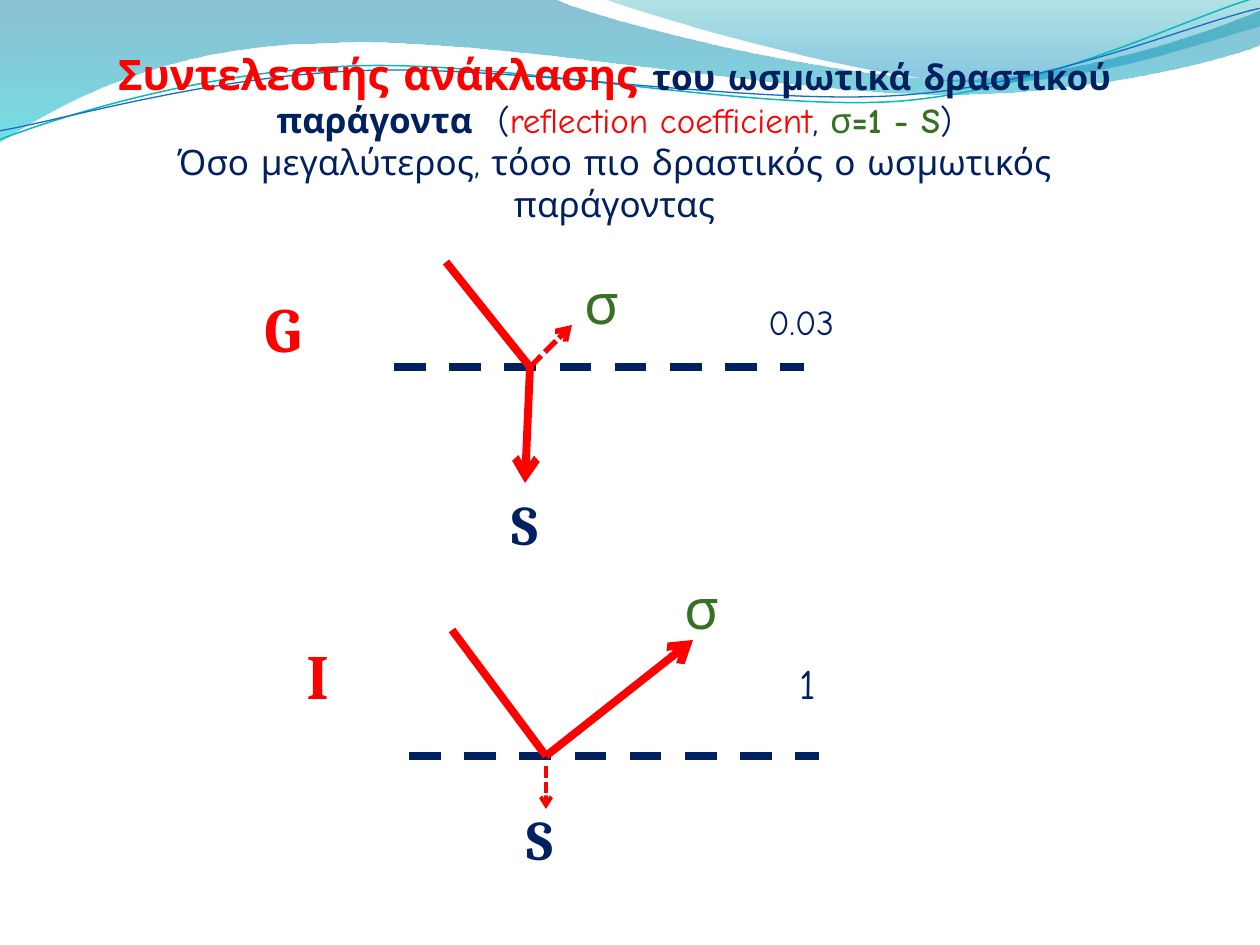
from dataclasses import dataclass

from pptx import Presentation
from pptx.dml.color import RGBColor
from pptx.enum.dml import MSO_LINE
from pptx.enum.lang import MSO_LANGUAGE_ID
from pptx.enum.shapes import MSO_CONNECTOR
from pptx.enum.text import MSO_AUTO_SIZE, PP_ALIGN
from pptx.oxml.ns import qn
from pptx.oxml.xmlchemy import OxmlElement
from pptx.util import Pt

STRAIGHT = MSO_CONNECTOR.STRAIGHT
DASH = MSO_LINE.DASH
SHORT_DASH = MSO_LINE.SQUARE_DOT
CENTER = PP_ALIGN.CENTER
GROW = MSO_AUTO_SIZE.SHAPE_TO_FIT_TEXT
GREEK = MSO_LANGUAGE_ID.GREEK
EMU_PER_PX = 914400 / 126


@dataclass(frozen=True)
class Theme:
    navy: str = "002060"
    red: str = "FF0000"
    green: str = "387026"
    teal_line: str = "0AB8BF"
    blue_line: str = "0F6FC6"
    wave_stops: tuple = ((0, "0074A1", 45), (1, "00C6CF", 55))
    crest_stops: tuple = ((0, "00A1A9", 30), (0.8, "008BBF", 45))
    ripple_tilt: float = -2.7
    sans: str = "Comic Neue"
    serif: str = "Cambria"
    body: int = 20
    heading: int = 24
    symbol: int = 32
    solute: int = 36
    thick: float = 4.5


def emu(px):
    return round(px * EMU_PER_PX)


class SlideBuilder:
    def __init__(self, slide, theme):
        self.slide = slide
        self.theme = theme

    def freeform(self, start, segments, close):
        corners = [
            (emu(x), emu(y))
            for segment in segments
            for x, y in zip(segment[::2], segment[1::2])
        ]
        builder = self.slide.shapes.build_freeform(*map(emu, start))
        builder.add_line_segments(corners, close=close)
        shape = builder.convert_to_shape()
        shape.shadow.inherit = False
        steps = iter(list(shape.element.iter(qn("a:lnTo"))))
        for segment in segments:
            first = next(steps)
            if len(segment) == 6:
                curve = OxmlElement("a:cubicBezTo")
                first.addprevious(curve)
                for step in (first, next(steps), next(steps)):
                    curve.append(step[0])
                    step.getparent().remove(step)
        return shape

    def wave(self, start, segments, stops):
        shape = self.freeform(start, segments, True)
        shape.line.fill.background()
        shape.fill.gradient()
        shape.fill.gradient_angle = 270
        for stop, (position, color, _) in zip(shape.fill.gradient_stops, stops):
            stop.position = position
            stop.color.rgb = RGBColor.from_string(color)
        colors = shape.element.spPr.iter(qn("a:srgbClr"))
        for element, (_, _, opacity) in zip(colors, stops):
            alpha = OxmlElement("a:alpha")
            alpha.set("val", str(opacity * 1000))
            element.append(alpha)

    def ripple(self, start, segments, color, width):
        shape = self.freeform(start, segments, False)
        shape.rotation = self.theme.ripple_tilt
        shape.fill.background()
        shape.line.color.rgb = RGBColor.from_string(color)
        shape.line.width = Pt(width)

    def line(self, start, end, color, width, dash=None, arrow=False):
        ends = [emu(value) for value in (*start, *end)]
        connector = self.slide.shapes.add_connector(STRAIGHT, *ends)
        connector.line.color.rgb = RGBColor.from_string(color)
        connector.line.width = Pt(width)
        if dash:
            connector.line.dash_style = dash
        if arrow:
            head = OxmlElement("a:tailEnd")
            head.set("type", "arrow")
            connector.element.spPr.find(qn("a:ln")).append(head)
        connector.element.spPr.append(OxmlElement("a:effectLst"))

    def text_frame(self, left, top, width, height, wrap):
        box = self.slide.shapes.add_textbox(*map(emu, (left, top, width, height)))
        box.text_frame.word_wrap = wrap
        box.text_frame.auto_size = GROW
        return box.text_frame

    def label(self, text, box, font, size, color, bold=False):
        paragraph = self.text_frame(*box, False).paragraphs[0]
        paragraph.text = text
        paragraph.font.name = font
        paragraph.font.size = Pt(size)
        paragraph.font.bold = bold
        paragraph.font.color.rgb = RGBColor.from_string(color)

    def heading(self, box, paragraphs):
        frame = self.text_frame(*box, True)
        for index, runs in enumerate(paragraphs):
            paragraph = frame.add_paragraph() if index else frame.paragraphs[0]
            paragraph.alignment = CENTER
            paragraph.font.name = self.theme.sans
            for text, size, color, bold in runs:
                run = paragraph.add_run()
                run.text = text
                run.font.language_id = GREEK
                run.font.size = Pt(size)
                run.font.bold = bold
                run.font.color.rgb = RGBColor.from_string(color)

    def sigma(self, left, top):
        self.label("σ", (left, top, 55, 81), self.theme.sans, self.theme.symbol, self.theme.green)

    def passage(self, left, top):
        self.label("S", (left, top, 52, 81), self.theme.serif, self.theme.symbol, self.theme.navy, True)

    def solute(self, text, box):
        self.label(text, box, self.theme.serif, self.theme.solute, self.theme.red, True)

    def value(self, text, box, size):
        self.label(text, box, self.theme.sans, size, self.theme.navy)

    def membrane(self, left, right, y):
        self.line((left, y), (right, y), self.theme.navy, self.theme.thick, DASH)

    def ray(self, start, end, arrow=True):
        self.line(start, end, self.theme.red, self.theme.thick, arrow=arrow)

    def weak_ray(self, start, end, width):
        self.line(start, end, self.theme.red, width, SHORT_DASH, True)


def main():
    theme = Theme()
    presentation = Presentation()
    presentation.slide_width, presentation.slide_height = emu(1260), emu(945)
    slide = presentation.slides.add_slide(presentation.slide_layouts[6])
    builder = SlideBuilder(slide, theme)

    builder.wave((0, 0), [
        (554, -1), (600, 21, 837, 79, 955, 79), (1075, 79, 1207, 33, 1260, 11),
        (1261, 45), (1238, 55, 1096, 96, 940, 94), (784, 94, 481, 35, 324, 43),
        (163, 45, 58, 105, -1, 142),
    ], theme.wave_stops)
    builder.wave((604, -1), [
        (641, 14, 859, 78, 969, 82), (1079, 87, 1211, 40, 1260, 26), (1260, 0),
    ], theme.crest_stops)
    builder.ripple((-3, 110), [
        (58, 90, 199, 52, 350, 53), (499, 53, 745, 117, 896, 114),
        (1049, 109, 1184, 45, 1260, 27),
    ], theme.teal_line, 0.85)
    builder.ripple((-2, 101), [
        (57, 94, 207, 57, 357, 58), (509, 58, 750, 112, 902, 108),
        (1052, 104, 1187, 52, 1262, 38),
    ], theme.blue_line, 0.75)

    builder.membrane(394, 804, 367)
    builder.ray((446, 262), (530, 367), arrow=False)
    builder.weak_ray((530, 367), (572, 325), 3)
    builder.sigma(572, 262)
    builder.passage(499, 483)
    builder.ray((530, 367), (525, 483))
    builder.solute("I", (294, 630, 43, 89))

    builder.heading((84, 42, 1061, 149), [
        [
            ("Συντελεστής ανάκλασης ", theme.heading, theme.red, True),
            ("του ωσμωτικά δραστικού παράγοντα  ", theme.body, theme.navy, True),
            ("(", theme.body, theme.navy, False),
            ("reflection coefficient", theme.body, theme.red, False),
            (", ", theme.body, theme.navy, False),
            ("σ", theme.body, theme.green, False),
            ("=1 - S", theme.body, theme.green, True),
            (")", theme.body, theme.navy, False),
        ],
        [("Όσο μεγαλύτερος, τόσο πιο δραστικός ο ωσμωτικός παράγοντας", theme.body, theme.navy, False)],
    ])

    builder.membrane(409, 819, 756)
    builder.ray((452, 630), (546, 756), arrow=False)
    builder.ray((546, 756), (693, 640))
    builder.sigma(672, 567)
    builder.passage(514, 798)
    builder.solute("G", (252, 283, 66, 89))
    builder.weak_ray((546, 766), (546, 809), 2.25)
    builder.value("0.03", (756, 294, 100, 55), theme.body)
    builder.value("1", (787, 651, 44, 64), theme.heading)

    presentation.save("out.pptx")


if __name__ == "__main__":
    main()
